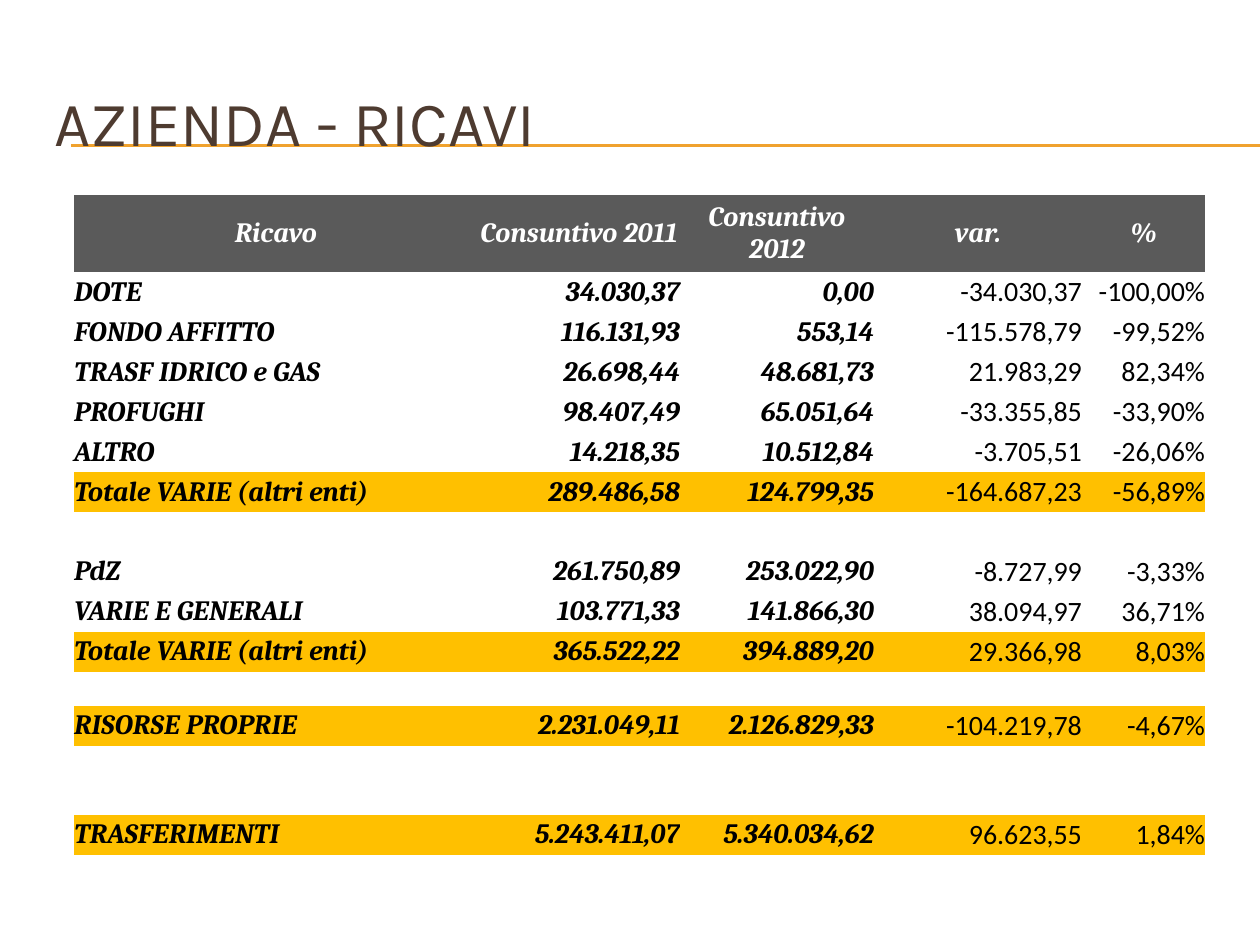
from pptx import Presentation
from pptx.dml.color import RGBColor
from pptx.enum import shapes, text
from pptx.oxml import ns
from pptx.util import Pt
from lxml import etree

SCALE = 914400 / 126
COLORS = {"title": "4E3B30", "rule": "F0A22E", "header": "5A5A5A",
          "total": "FFC000", "light": "FFFFFF", "dark": "000000"}
NO_GRID = "{2D5ABB26-0587-4C30-8999-92F81FD0307C}"
LEFT, CENTER, RIGHT = text.PP_ALIGN.LEFT, text.PP_ALIGN.CENTER, text.PP_ALIGN.RIGHT

COLUMNS = [404, 202, 194, 208, 123]
HEADINGS = ["Ricavo", "Consuntivo 2011", "Consuntivo 2012", "var.", "%"]
REVENUES = [
    ("item", 40, ["DOTE", "34.030,37", "0,00", "-34.030,37", "-100,00%"]),
    ("item", 40, ["FONDO AFFITTO", "116.131,93", "553,14", "-115.578,79", "-99,52%"]),
    ("item", 40, ["TRASF IDRICO e GAS", "26.698,44", "48.681,73", "21.983,29", "82,34%"]),
    ("item", 40, ["PROFUGHI", "98.407,49", "65.051,64", "-33.355,85", "-33,90%"]),
    ("item", 40, ["ALTRO", "14.218,35", "10.512,84", "-3.705,51", "-26,06%"]),
    ("total", 40, ["Totale VARIE (altri enti)", "289.486,58", "124.799,35", "-164.687,23", "-56,89%"]),
    ("gap", 40, [""] * 5),
    ("item", 40, ["PdZ", "261.750,89", "253.022,90", "-8.727,99", "-3,33%"]),
    ("item", 40, ["VARIE E GENERALI", "103.771,33", "141.866,30", "38.094,97", "36,71%"]),
    ("total", 40, ["Totale VARIE (altri enti)", "365.522,22", "394.889,20", "29.366,98", "8,03%"]),
    ("gap", 34, [""] * 5),
    ("total", 40, ["RISORSE PROPRIE", "2.231.049,11", "2.126.829,33", "-104.219,78", "-4,67%"]),
    ("gap", 34, [""] * 5),
    ("gap", 35, [""] * 5),
    ("total", 40, ["TRASFERIMENTI", "5.243.411,07", "5.340.034,62", "96.623,55", "1,84%"]),
]


def px(length):
    return round(length * SCALE)


def color(name):
    return RGBColor.from_string(COLORS[name])


def write(frame, words, *, size=16, font="Calibri", ink="dark", strong=False, align=LEFT):
    paragraph = frame.paragraphs[0]
    paragraph.alignment = align
    if not words:
        paragraph._p.get_or_add_endParaRPr().set("sz", str(size * 100))
        return
    run = paragraph.add_run()
    run.text = words
    run.font.size = Pt(size)
    run.font.name = font
    run.font.bold = run.font.italic = strong
    run.font.color.rgb = color(ink)


def add_rule(slide, left, top, right):
    rule = slide.shapes.add_connector(
        shapes.MSO_CONNECTOR.STRAIGHT, px(left), px(top), px(right), px(top))
    rule.line.color.rgb = color("rule")
    rule.line.width = Pt(0.75)
    etree.SubElement(rule._element.spPr, ns.qn("a:effectLst"))


def add_heading(slide, left, top, width, height):
    for offset in (82, 83):
        add_rule(slide, left + 29, top + offset, 1260)
    heading = slide.shapes.add_textbox(px(left), px(top), px(width), px(height))
    heading.text_frame.word_wrap = True
    heading.text_frame.vertical_anchor = text.MSO_ANCHOR.MIDDLE
    write(heading.text_frame, "AZIENDA - RICAVI", size=36, font="Karla", ink="title")


def fill_cell(cell, words, kind, column):
    cell.margin_left = cell.margin_right = cell.margin_top = cell.margin_bottom = 0
    cell.vertical_anchor = text.MSO_ANCHOR.MIDDLE
    if kind in COLORS:
        cell.fill.solid()
        cell.fill.fore_color.rgb = color(kind)
    else:
        cell.fill.background()
    is_header = kind == "header"
    strong = is_header or column < 3
    align = CENTER if is_header else RIGHT if column else LEFT
    write(cell.text_frame, words, font="Cambria" if strong else "Calibri",
          ink="light" if is_header else "dark", strong=strong, align=align)


def add_revenues(slide, left, top):
    rows = [("header", 77, HEADINGS)] + REVENUES
    height = sum(row[1] for row in rows)
    revenues = slide.shapes.add_table(
        len(rows), len(COLUMNS), px(left), px(top), px(sum(COLUMNS)), px(height)).table
    revenues.first_row = revenues.horz_banding = False
    revenues._tbl.tblPr.find(ns.qn("a:tableStyleId")).text = NO_GRID
    for column, width in zip(revenues.columns, COLUMNS):
        column.width = px(width)
    for index, (kind, row_height, entries) in enumerate(rows):
        revenues.rows[index].height = px(row_height)
        for column, words in enumerate(entries):
            fill_cell(revenues.cell(index, column), words, kind, column)


def main():
    deck = Presentation()
    deck.slide_width, deck.slide_height = px(1260), px(945)
    slide = deck.slides.add_slide(deck.slide_layouts[6])
    add_heading(slide, 42, 63, 1197, 116)
    add_revenues(slide, 74, 195)
    deck.save("out.pptx")


if __name__ == "__main__":
    main()
